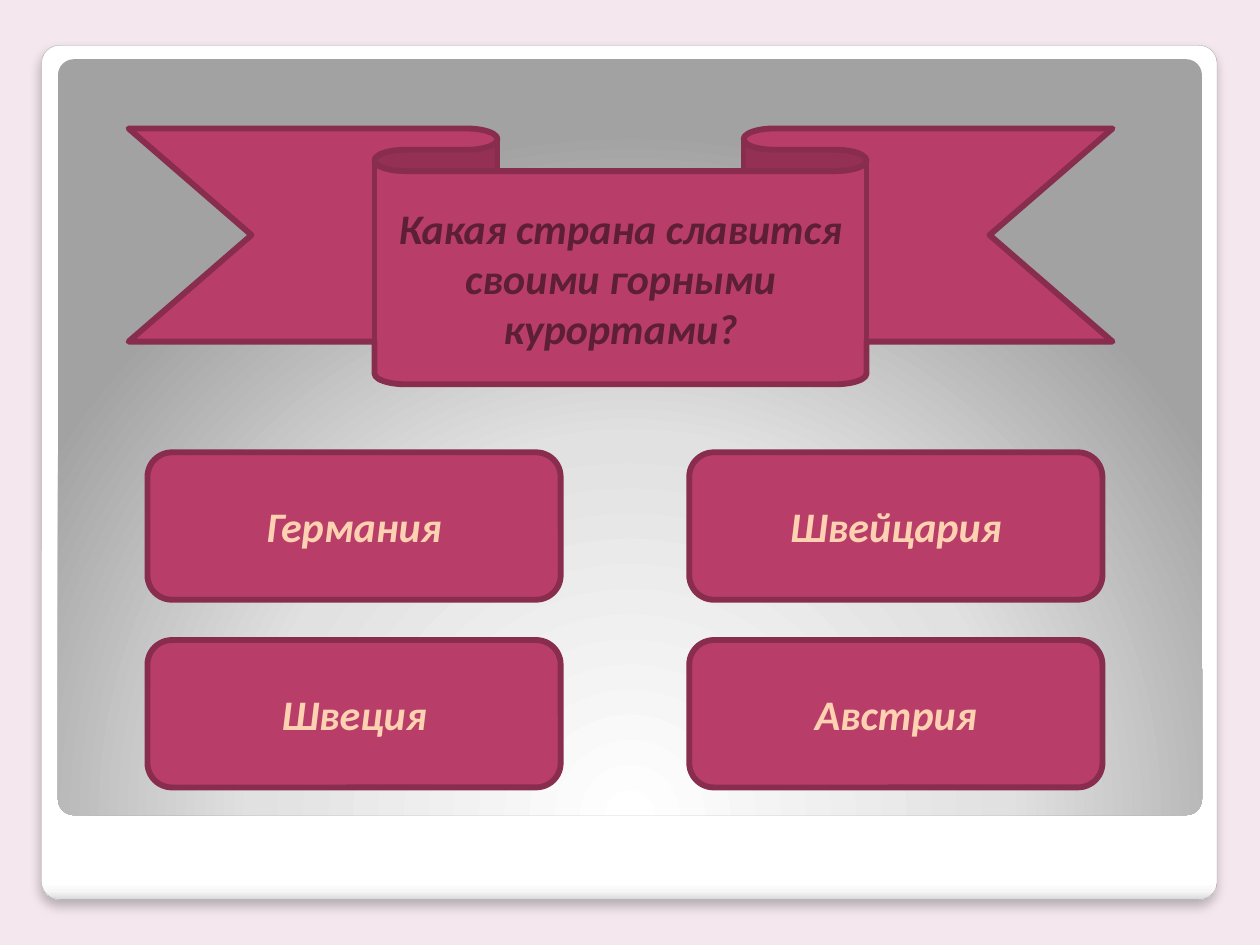
from dataclasses import dataclass

from lxml import etree
from pptx import Presentation
from pptx import util as u
from pptx.dml.color import RGBColor
from pptx.enum import shapes, text
from pptx.oxml import parse_xml
from pptx.oxml.ns import nsdecls, qn


@dataclass(frozen=True)
class Theme:
    background: str = "F4E7ED"
    accent: str = "B83D68"
    accent_line: str = "882D4D"
    frame_line: str = "A4A4A4"
    question: str = "5C1F34"
    answer: str = "FDD1B1"
    shadow: str = "000000"
    frame_stops: tuple = ((0, "FFFFFF"), (98, "FFFFFF"), (99, "F7F7F7"), (100, "DADADA"))
    panel_stops: tuple = ((0, "FFFFFF"), (55, "E1E1E1"), (100, "A2A2A2"))
    font: str = "Calibri"
    text_size: int = 24
    line_width: float = 3.35
    frame_line_width: float = 0.16


THEME = Theme()
LINEAR_DOWN = '<a:lin ang="5400000" scaled="0"/>'
RADIAL_FROM_BOTTOM = (
    '<a:path path="circle">'
    '<a:fillToRect l="50000" t="175000" r="50000" b="-75000"/></a:path>'
)
ANSWERS = (("Германия", "Швейцария"), ("Швеция", "Австрия"))


def set_values(target, values):
    for name, value in values.items():
        setattr(target, name, value)


def add_shape(slide, kind, box, fill, line=None, line_width=0):
    shape = slide.shapes.add_shape(kind, *(u.Inches(length) for length in box))
    shape.shadow.inherit = False
    shape.fill.solid()
    shape.fill.fore_color.rgb = RGBColor.from_string(fill)
    if line:
        shape.line.color.rgb = RGBColor.from_string(line)
        shape.line.width = u.Pt(line_width)
    else:
        shape.line.fill.background()
    return shape


def set_gradient(shape, stops, direction):
    stop_list = "".join(
        f'<a:gs pos="{position * 1000}"><a:srgbClr val="{color}"/></a:gs>'
        for position, color in stops
    )
    gradient = parse_xml(
        f'<a:gradFill {nsdecls("a")} rotWithShape="1">'
        f"<a:gsLst>{stop_list}</a:gsLst>{direction}</a:gradFill>"
    )
    properties = shape._element.spPr
    properties.replace(properties.find(qn("a:solidFill")), gradient)


def set_shadow(shape, color, opacity, blur, distance):
    effects = shape._element.spPr.find(qn("a:effectLst"))
    shadow = etree.SubElement(
        effects, qn("a:outerShdw"), blurRad=str(u.Pt(blur)),
        dist=str(u.Pt(distance)), dir="5400000", algn="t", rotWithShape="0",
    )
    tint = etree.SubElement(shadow, qn("a:srgbClr"), val=color)
    etree.SubElement(tint, qn("a:alpha"), val=str(opacity * 1000))


def add_panel(slide, box, stops, direction, **outline):
    panel = add_shape(slide, shapes.MSO_SHAPE.ROUNDED_RECTANGLE, box, stops[0][1], **outline)
    panel.adjustments[0] = 0.021
    set_gradient(panel, stops, direction)
    return panel


def add_label(slide, kind, box, wording, color):
    label = add_shape(slide, kind, box, THEME.accent, THEME.accent_line, THEME.line_width)
    set_values(label.text_frame, {
        "word_wrap": True,
        "vertical_anchor": text.MSO_ANCHOR.MIDDLE,
    })
    paragraph = label.text_frame.paragraphs[0]
    paragraph.alignment = text.PP_ALIGN.CENTER
    run = paragraph.add_run()
    run.text = wording
    set_values(run.font, {
        "name": THEME.font,
        "size": u.Pt(THEME.text_size),
        "bold": True,
        "italic": True,
    })
    run.font.color.rgb = RGBColor.from_string(color)


def add_answers(slide, left, top, width, height, column_step, row_step):
    for row, answers in enumerate(ANSWERS):
        for column, answer in enumerate(answers):
            box = (left + column * column_step, top + row * row_step, width, height)
            add_label(slide, shapes.MSO_SHAPE.ROUNDED_RECTANGLE, box, answer, THEME.answer)


def main():
    presentation = Presentation()
    set_values(presentation, {"slide_width": u.Inches(10), "slide_height": u.Inches(7.5)})
    slide = presentation.slides.add_slide(presentation.slide_layouts[6])
    slide.background.fill.solid()
    slide.background.fill.fore_color.rgb = RGBColor.from_string(THEME.background)

    frame = add_panel(
        slide, (0.33, 0.36, 9.33, 6.78), THEME.frame_stops, LINEAR_DOWN,
        line=THEME.frame_line, line_width=THEME.frame_line_width,
    )
    set_shadow(frame, THEME.shadow, opacity=25, blur=6, distance=4)
    add_panel(slide, (0.46, 0.47, 9.08, 6), THEME.panel_stops, RADIAL_FROM_BOTTOM)
    add_label(
        slide, shapes.MSO_SHAPE.DOWN_RIBBON, (1.02, 1.02, 7.81, 2.03),
        "Какая страна славится своими горными курортами?", THEME.question,
    )
    add_answers(slide, left=1.17, top=3.59, width=3.28, height=1.17,
                column_step=4.3, row_step=1.49)
    presentation.save("out.pptx")


if __name__ == "__main__":
    main()
